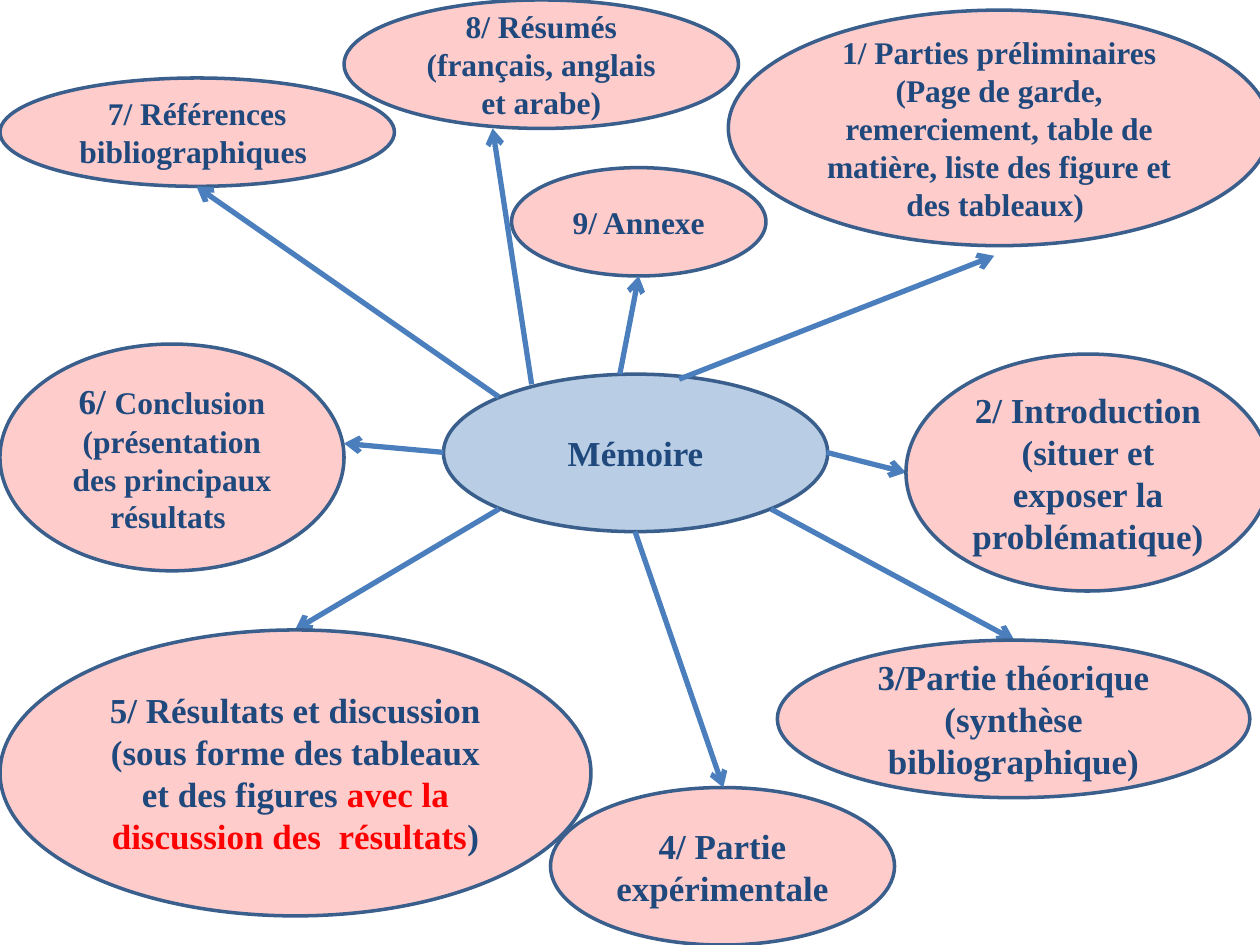
from lxml.etree import SubElement
from pptx import Presentation
from pptx.dml.color import RGBColor
from pptx.enum.shapes import MSO_CONNECTOR, MSO_SHAPE
from pptx.enum.text import MSO_ANCHOR, PP_ALIGN
from pptx.oxml.ns import qn
from pptx.util import Pt

INK, RED = "1F497D", "FF0000"
PINK, BLUE = "FFCCCC", "B9CDE5"
EDGE, LINK = "3A5F8C", "4B7EBC"

HUB = (253.4, 213.8, 219.6, 90)

MAIN = [
    ((416.2, 5.8, 309.6, 134.6), (388.1, 216.7, 568.1, 146.2),
     [[("1/ Parties préliminaires (Page de garde, remerciement, table de matière, "
        "liste des figure et des tableaux) ", 18, INK)]]),
    ((517.7, 202.3, 208.1, 135.4), (472.3, 258.5, 517.7, 270),
     [[("2/ Introduction", 20, INK)],
      [("(situer et exposer la problématique)", 20, INK)]]),
    ((444.2, 365.8, 270, 90), (440.6, 290.9, 579.6, 365.8),
     [[("3/Partie théorique (synthèse bibliographique)", 20, INK)]]),
    ((0, 360, 337.7, 163.4), (285.1, 290.9, 168.5, 360),
     [[("5/ Résultats et discussion (sous forme des tableaux et des figures ", 20, INK),
       ("avec la discussion des  résultats", 20, RED),
       (")", 20, INK)]]),
    ((0, 196.6, 196.6, 129.6), (253.4, 258.5, 196.6, 253.4),
     [[("6/ ", 20, INK),
       ("Conclusion (présentation des principaux résultats ", 18, INK)]]),
]

EXTRA = [
    ((0, 44.6, 225.4, 61.9), (285.1, 226.8, 112.3, 106.6),
     [[("7/ Références bibliographiques ", 18, INK)]]),
    ((196.6, 0, 225.4, 73.4), (303.8, 219.6, 281.5, 73.4),
     [[("8/ Résumés (français, anglais et arabe)", 18, INK)]]),
    ((292.3, 95.8, 145.4, 61.9), (354.2, 213.8, 365, 157.7),
     [[("9/ Annexe", 18, INK)]]),
    ((314.6, 450, 196.6, 90), (362.9, 303.8, 413.3, 450),
     [[("4/ Partie expérimentale ", 20, INK)]]),
]


def paint(color, tone):
    color.rgb = RGBColor.from_string(tone)


def write(frame, paras):
    frame.word_wrap = True
    frame.vertical_anchor = MSO_ANCHOR.MIDDLE
    for i, parts in enumerate(paras):
        para = frame.add_paragraph() if i else frame.paragraphs[0]
        para.alignment = PP_ALIGN.CENTER
        for text, size, tone in parts:
            run = para.add_run()
            run.text = text
            run.font.name = "Times New Roman"
            run.font.size = Pt(size)
            run.font.bold = True
            paint(run.font.color, tone)


def bubble(slide, box, paras, tone=PINK):
    shape = slide.shapes.add_shape(MSO_SHAPE.OVAL, *map(Pt, box))
    shape.shadow.inherit = False
    shape.fill.solid()
    paint(shape.fill.fore_color, tone)
    paint(shape.line.color, EDGE)
    shape.line.width = Pt(2)
    write(shape.text_frame, paras)


def arrow(slide, ends):
    link = slide.shapes.add_connector(MSO_CONNECTOR.STRAIGHT, *map(Pt, ends))
    paint(link.line.color, LINK)
    link.line.width = Pt(3)
    SubElement(link.line._get_or_add_ln(), qn("a:tailEnd"), type="arrow")
    SubElement(link._element.spPr, qn("a:effectLst"))


def main():
    deck = Presentation()
    deck.slide_width, deck.slide_height = Pt(720), Pt(540)
    slide = deck.slides.add_slide(deck.slide_layouts[6])
    bubble(slide, HUB, [[("Mémoire", 20, INK)]], BLUE)
    for _, ends, _ in MAIN:
        arrow(slide, ends)
    for box, _, paras in MAIN:
        bubble(slide, box, paras)
    for box, ends, paras in EXTRA:
        bubble(slide, box, paras)
        arrow(slide, ends)
    deck.save("out.pptx")


if __name__ == "__main__":
    main()
